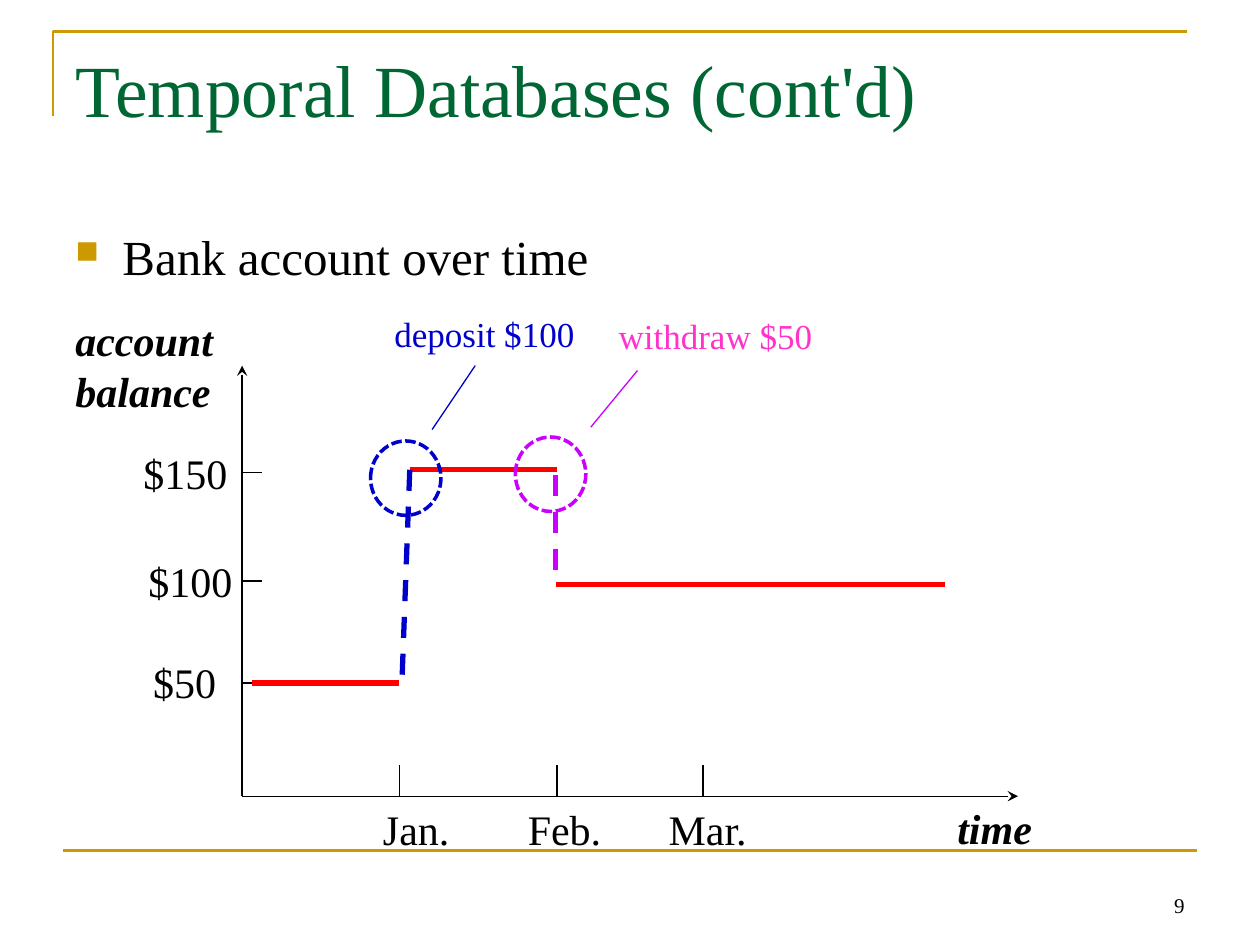
from lxml import etree
from pptx import Presentation
from pptx.dml.color import RGBColor
from pptx.enum.dml import MSO_LINE
from pptx.enum.shapes import MSO_CONNECTOR, MSO_SHAPE
from pptx.enum.text import MSO_ANCHOR, PP_ALIGN
from pptx.oxml.ns import qn
from pptx.util import Cm, Pt

STRAIGHT, OVAL = MSO_CONNECTOR.STRAIGHT, MSO_SHAPE.OVAL
DASH, DOTS = MSO_LINE.DASH, MSO_LINE.SQUARE_DOT
TOP, BOTTOM = MSO_ANCHOR.TOP, MSO_ANCHOR.BOTTOM
LEFT, RIGHT, JUSTIFY = PP_ALIGN.LEFT, PP_ALIGN.RIGHT, PP_ALIGN.JUSTIFY

GOLD = RGBColor(0xCC, 0x99, 0x00)
GREEN = RGBColor(0x00, 0x66, 0x33)
BLACK = RGBColor(0x00, 0x00, 0x00)
RED = RGBColor(0xFF, 0x00, 0x00)
BLUE = RGBColor(0x00, 0x00, 0xCC)
PURPLE = RGBColor(0xCC, 0x00, 0xFF)
PINK = RGBColor(0xFF, 0x33, 0xCC)

FONT = "Times New Roman"
AXIS_X, AXIS_Y = 4.88, 16.05  # origin of the plot, in cm


def write(frame, text, size, color=BLACK, align=LEFT, **style):
    frame.text = text
    look = {"name": FONT, "size": Pt(size), **style}
    for para in frame.paragraphs:
        para.alignment = align
        for run in para.runs:
            for key, value in look.items():
                setattr(run.font, key, value)
            run.font.color.rgb = color


def add_text(slide, box, text, size, color=BLACK, align=LEFT, wrap=False,
             anchor=TOP, **style):
    frame = slide.shapes.add_textbox(*map(Cm, box)).text_frame
    frame.word_wrap = wrap
    frame.vertical_anchor = anchor
    write(frame, text, size, color, align, **style)
    return frame


def set_line(line, color, width, dash=None):
    line.color.rgb = color
    line.width = Pt(width)
    if dash:
        line.dash_style = dash


def add_line(slide, start, end, color=BLACK, width=0.75, dash=None, arrow=False):
    link = slide.shapes.add_connector(STRAIGHT, *map(Cm, start + end))
    set_line(link.line, color, width, dash)
    props = link._element.spPr
    if arrow:
        etree.SubElement(props.find(qn("a:ln")), qn("a:tailEnd"), type="stealth")
    etree.SubElement(props, qn("a:effectLst"))


def add_ring(slide, left, top, color):
    ring = slide.shapes.add_shape(OVAL, Cm(left), Cm(top), Cm(1.42), Cm(1.5))
    ring.shadow.inherit = False
    ring.fill.background()
    set_line(ring.line, color, 2, DOTS)


def add_frame(slide):
    pen = slide.shapes.build_freeform(Cm(1.07), Cm(2.34))
    pen.add_line_segments([(Cm(1.07), Cm(0.64)), (Cm(23.93), Cm(0.64))], close=False)
    edge = pen.convert_to_shape()
    edge.shadow.inherit = False
    edge.fill.background()
    set_line(edge.line, GOLD, 1.5)
    add_line(slide, (1.27, 17.15), (24.13, 17.15), GOLD, 1.5)


def add_title(slide, text):
    title = slide.shapes.title
    place = {"left": 1.27, "top": 0.76, "width": 22.86, "height": 3.18}
    for key, value in place.items():
        setattr(title, key, Cm(value))
    title.text_frame.vertical_anchor = TOP
    write(title.text_frame, text, 42, GREEN)


def add_bullet(slide, text):
    frame = add_text(slide, (1.27, 4.45, 22.86, 12.57), text, 28,
                     align=JUSTIFY, wrap=True)
    para = frame.paragraphs[0]
    para.space_before = Pt(5.6)
    props = para._p.get_or_add_pPr()
    props.set("marL", str(Cm(0.95)))
    props.set("indent", str(-Cm(0.95)))
    tint = etree.SubElement(props, qn("a:buClr"))
    etree.SubElement(tint, qn("a:srgbClr"), val=str(GOLD))
    etree.SubElement(props, qn("a:buSzPct"), val="65000")
    etree.SubElement(props, qn("a:buChar"), char="■")


def add_axes(slide):
    origin = (AXIS_X, AXIS_Y)
    add_line(slide, origin, (20.52, AXIS_Y), arrow=True)
    add_line(slide, origin, (AXIS_X, 7.37), arrow=True)
    add_text(slide, (19.05, 16.05, 2.24, 1.27), "time", 24, bold=True, italic=True)
    add_text(slide, (1.27, 6.22, 3.53, 2.31), "account\nbalance", 24,
             bold=True, italic=True)

    # Balance ticks: height, label, label left, top and width
    for y, text, left, top, width in (
        (13.77, "$50", 2.84, 13.11, 1.8),
        (11.71, "$100", 2.74, 11.07, 2.24),
        (9.53, "$150", 2.64, 8.89, 2.24),
    ):
        add_line(slide, (AXIS_X, y), (AXIS_X + 0.4, y))
        add_text(slide, (left, top, width, 1.27), text, 24)

    # Month ticks: place, label, label left and width
    for x, text, left, width in (
        (8.05, "Jan.", 7.47, 1.85),
        (11.23, "Feb.", 10.39, 2.01),
        (14.17, "Mar.", 13.23, 2.11),
    ):
        add_line(slide, (x, AXIS_Y), (x, AXIS_Y - 0.63))
        add_text(slide, (left, 16.08, width, 1.27), text, 24)


def add_steps(slide):
    # Steady balances
    for x, y, end in ((5.08, 13.77, 8.05), (8.26, 9.47, 11.23), (11.2, 11.79, 19.05)):
        add_line(slide, (x, y), (end, y), RED, 3)
    # Jumps between them
    add_line(slide, (8.26, 9.47), (8.1, 13.82), BLUE, 3, DASH)
    add_line(slide, (11.2, 9.58), (11.2, 11.79), PURPLE, 3, DASH)


def add_event(slide, ring, start, end, box, text, color, ink):
    add_ring(slide, *ring, color)
    add_line(slide, start, end, color)
    add_text(slide, box, text, 20, ink)


def main():
    deck = Presentation()
    deck.slide_width, deck.slide_height = Cm(25.4), Cm(19.05)
    slide = deck.slides.add_slide(deck.slide_layouts[5])

    # Page furniture and heading
    add_frame(slide)
    add_title(slide, "Temporal Databases (cont'd)")
    add_bullet(slide, "Bank account over time")
    add_text(slide, (18.21, 17.35, 5.92, 1.27), "9", 12, align=RIGHT,
             wrap=True, anchor=BOTTOM)

    # Balance plot
    add_axes(slide)
    add_steps(slide)
    add_event(slide, (7.47, 8.89), (8.71, 8.66), (9.58, 7.37),
              (7.7, 6.17, 4.17, 1.12), "deposit $100", BLUE, BLUE)
    add_event(slide, (10.39, 8.81), (11.91, 8.61), (12.85, 7.47),
              (12.22, 6.22, 4.45, 1.12), "withdraw $50", PURPLE, PINK)
    deck.save("out.pptx")


if __name__ == "__main__":
    main()
